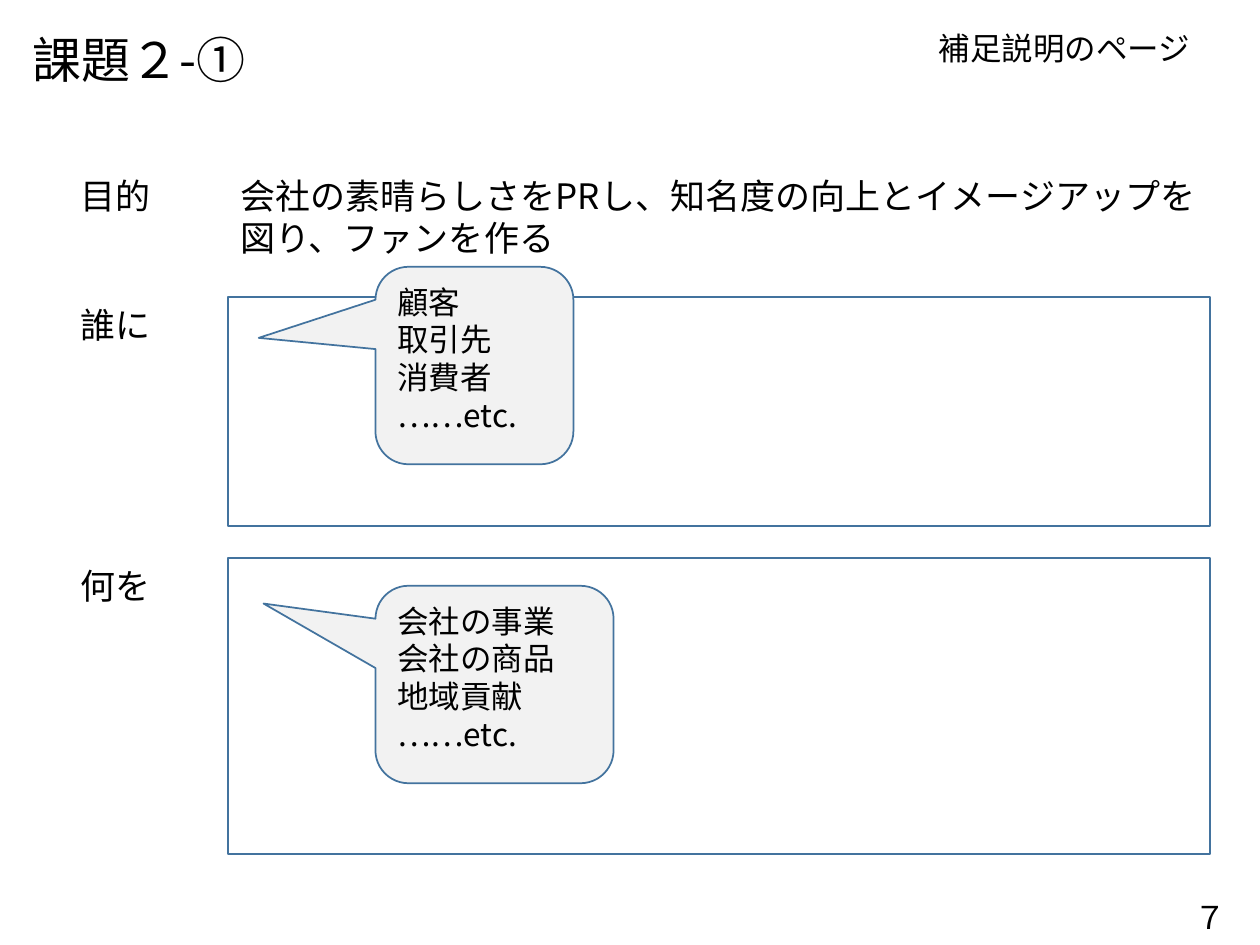
import pptx
import pptx.dml.color
import pptx.enum.shapes
import pptx.enum.text
import pptx.oxml
import pptx.oxml.ns
import pptx.util

Cm = pptx.util.Cm
Shape = pptx.enum.shapes.MSO_SHAPE
Align = pptx.enum.text.PP_ALIGN
BLACK = pptx.dml.color.RGBColor(0x00, 0x00, 0x00)
BLUE = pptx.dml.color.RGBColor(0x43, 0x73, 0x9E)
GREY = pptx.dml.color.RGBColor(0xF2, 0xF2, 0xF2)
FONT = "Noto Sans CJK JP"
INDENT = 3.22


def write(shape, text, size=20, align=Align.LEFT, wrap=True):
    """Fill a shape with one paragraph per line of text."""
    frame = shape.text_frame
    frame.word_wrap = wrap
    frame.auto_size = pptx.enum.text.MSO_AUTO_SIZE.NONE
    frame.vertical_anchor = pptx.enum.text.MSO_ANCHOR.TOP
    frame.text = text
    for para in frame.paragraphs:
        para.alignment = align
        for run in para.runs:
            run.font.size = pptx.util.Pt(size)
            run.font.name = FONT
            run.font.color.rgb = BLACK
            east = pptx.oxml.parse_xml(
                f'<a:ea {pptx.oxml.ns.nsdecls("a")} typeface="{FONT}"/>')
            run.font._element.find(pptx.oxml.ns.qn("a:latin")).addnext(east)


def label(slide, box, text, **form):
    """Add a text box with formatted text."""
    write(slide.shapes.add_textbox(*map(Cm, box)), text, **form)


def panel(slide, kind, box, fill=None):
    """Add an outlined shape, filled if a colour is given."""
    shape = slide.shapes.add_shape(kind, *map(Cm, box))
    shape.shadow.inherit = False
    if fill is None:
        shape.fill.background()
    else:
        shape.fill.solid()
        shape.fill.fore_color.rgb = fill
    shape.line.color.rgb = BLUE
    shape.line.width = pptx.util.Pt(1)
    return shape


def header(slide, box):
    """Place the title at the left and the page note at the right."""
    left, top, width, height = box
    title = slide.shapes.title
    title.left, title.top = Cm(left), Cm(top)
    title.width, title.height = Cm(10), Cm(height)
    write(title, "課題２-①", size=28)
    label(slide, (left + width - 6, top, 6, 1.02), "補足説明のページ", size=18)


def goal(slide, box):
    """Place the purpose label and its sentence."""
    left, top, width, height = box
    label(slide, (left, top, 1.93, 1.12), "目的", wrap=False)
    label(slide, (left + INDENT, top, width - INDENT, height),
          "会社の素晴らしさをPRし、知名度の向上とイメージアップを図り、ファンを作る")


def answer(slide, box, name, hints, drop, wide, tip):
    """Place a label, an answer frame and a callout with hints."""
    left, top, width, height = box
    label(slide, (left, top, 1.93, 1.12), name, wrap=False)
    panel(slide, Shape.RECTANGLE,
          (left + INDENT, top, width - INDENT, height))
    bubble = panel(slide, Shape.ROUNDED_RECTANGULAR_CALLOUT,
                   (left + 6.2, top + drop, wide, 3.98), GREY)
    for spot, value in enumerate((*tip, 0.167)):
        bubble.adjustments[spot] = value
    write(bubble, "\n".join((*hints, "……etc.")), size=18)


def main():
    """Build the slide and save it."""
    deck = pptx.Presentation()
    deck.slide_width, deck.slide_height = Cm(25.4), Cm(19.05)
    slide = deck.slides.add_slide(deck.slide_layouts[5])
    header(slide, (0.41, 0.46, 24.26, 1.45))
    goal(slide, (1.37, 3.4, 23.03, 1.96))
    answer(slide, (1.37, 5.99, 23.03, 4.62), "誰に",
           ("顧客", "取引先", "消費者"), -0.61, 3.99, (-1.09, -0.14))
    answer(slide, (1.37, 11.25, 23.03, 5.97), "何を",
           ("会社の事業", "会社の商品", "地域貢献"), 0.56, 4.8, (-0.97, -0.41))
    label(slide, (23.39, 17.98, 2.01, 1.02), "７", size=18,
          align=Align.CENTER)
    deck.save("out.pptx")


if __name__ == "__main__":
    main()
